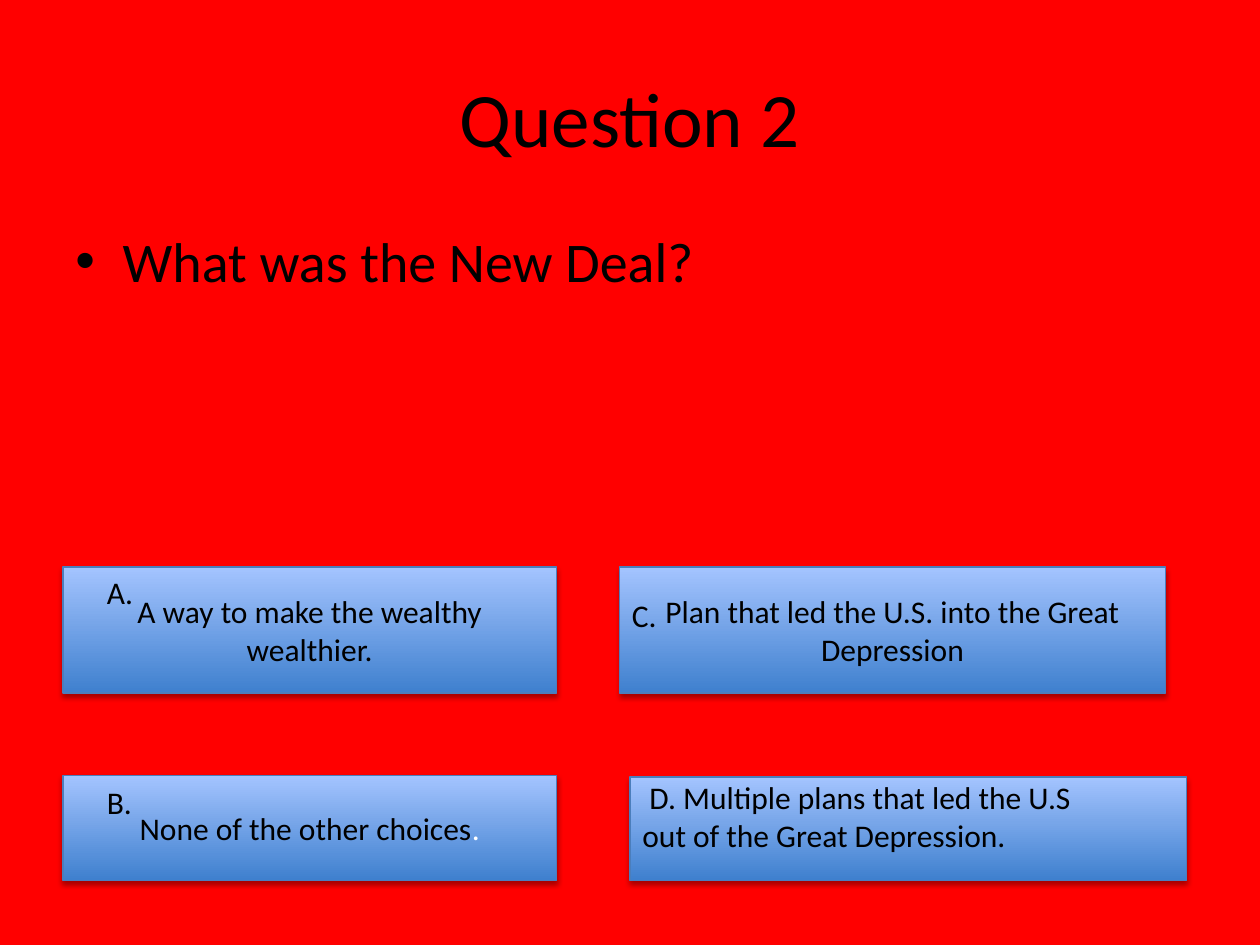
import pptx
import pptx.dml.color
import pptx.enum.shapes
import pptx.enum.text
import pptx.oxml
import pptx.oxml.ns
import pptx.util
from lxml import etree

Pt = pptx.util.Pt
ALIGN = pptx.enum.text.PP_ALIGN
ANCHOR = pptx.enum.text.MSO_ANCHOR

COLORS = {
    "background": "FF0000",
    "text": "000000",
    "light_text": "FFFFFF",
    "button_bottom": "3F80CE",
    "button_top": "A4C4FF",
    "button_line": "4B7EBC",
    "shadow": "000000",
}
FONT = "Calibri"

# Boxes are left, top, width, height in points; runs are (text, colour).
BUTTONS = [
    ((354, 324, 312, 72), [("Plan that led the U.S. into the Great Depression", "text")]),
    ((36, 324, 282, 72), [("A way to make the wealthy wealthier.", "text")]),
    ((36, 443, 282, 60), [("None of the other choices", "text"), (".", "light_text")]),
    ((360, 444, 318, 59), []),
]
TITLE = ((36, 21.6, 648, 90), "Question 2")
QUESTION = ((36, 126, 648, 126), "What was the New Deal?")
LABELS = [
    ((54, 324, 42, 29), "A."),
    ((54, 444, 42, 29), "B."),
    ((354, 337, 30, 29), "C."),
    ((360, 441, 270, 51), " D. Multiple plans that led the U.S out of the Great Depression."),
]


def rgb(name):
    return pptx.dml.color.RGBColor.from_string(COLORS[name])


def write_text(shape, runs, size=18, align=ALIGN.LEFT, anchor=ANCHOR.TOP):
    frame = shape.text_frame
    frame.word_wrap = True
    frame.vertical_anchor = anchor
    paragraph = frame.paragraphs[0]
    paragraph.alignment = align
    for text, color in runs:
        run = paragraph.add_run()
        run.text = text
        run.font.name = FONT
        run.font.size = Pt(size)
        run.font.color.rgb = rgb(color)
    return paragraph


def add_text(slide, box, text, **text_format):
    shape = slide.shapes.add_textbox(*map(Pt, box))
    return write_text(shape, [(text, "text")], **text_format)


def add_bullet(paragraph, indent):
    properties = paragraph._p.get_or_add_pPr()
    properties.set("marL", str(Pt(indent)))
    properties.set("indent", str(-Pt(indent)))
    qn = pptx.oxml.ns.qn
    etree.SubElement(properties, qn("a:buFont"), typeface="Arial")
    etree.SubElement(properties, qn("a:buChar"), char="•")


def add_drop_shadow(shape):
    shape.shadow.inherit = False
    effects = shape._element.spPr.find(pptx.oxml.ns.qn("a:effectLst"))
    effects.append(pptx.oxml.parse_xml(
        f'<a:outerShdw {pptx.oxml.ns.nsdecls("a")} blurRad="{Pt(3.1)}" '
        f'dist="{Pt(1.8)}" dir="5400000" rotWithShape="0">'
        f'<a:srgbClr val="{COLORS["shadow"]}"><a:alpha val="35000"/></a:srgbClr>'
        '</a:outerShdw>'))


def add_button(slide, box, runs):
    kind = pptx.enum.shapes.MSO_SHAPE.ACTION_BUTTON_CUSTOM
    shape = slide.shapes.add_shape(kind, *map(Pt, box))
    shape.fill.gradient()
    shape.fill.gradient_angle = 90
    for stop, color in zip(shape.fill.gradient_stops, ("button_bottom", "button_top")):
        stop.color.rgb = rgb(color)
    shape.line.color.rgb = rgb("button_line")
    shape.line.width = Pt(0.75)
    add_drop_shadow(shape)
    write_text(shape, runs, align=ALIGN.CENTER, anchor=ANCHOR.MIDDLE)


def main():
    presentation = pptx.Presentation()
    presentation.slide_width, presentation.slide_height = Pt(720), Pt(540)
    slide = presentation.slides.add_slide(presentation.slide_layouts[6])
    slide.background.fill.solid()
    slide.background.fill.fore_color.rgb = rgb("background")

    for box, runs in BUTTONS:
        add_button(slide, box, runs)
    add_text(slide, *TITLE, size=44, align=ALIGN.CENTER, anchor=ANCHOR.MIDDLE)
    add_bullet(add_text(slide, *QUESTION, size=32), indent=27)
    for box, text in LABELS:
        add_text(slide, box, text)

    presentation.save("out.pptx")


if __name__ == "__main__":
    main()
